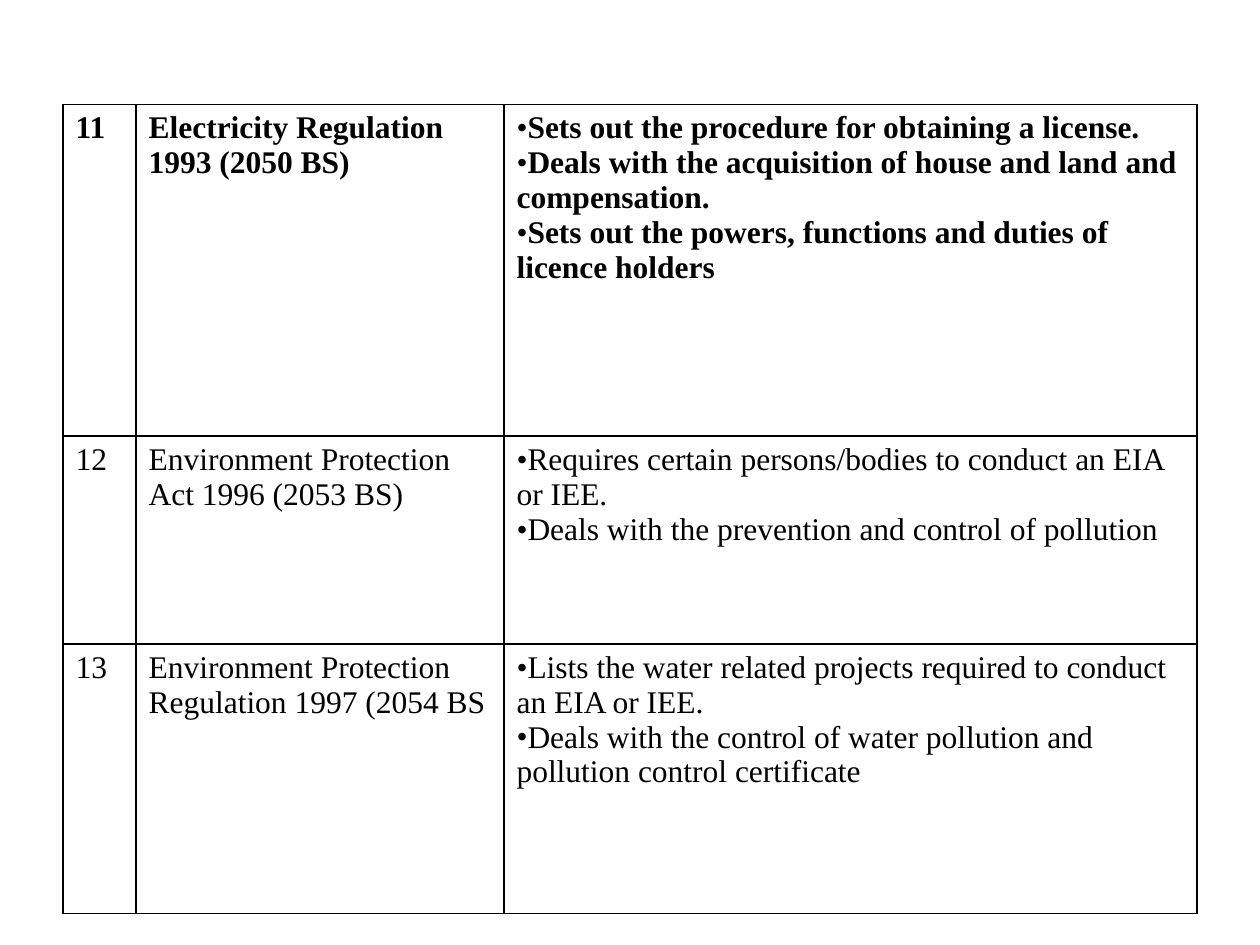
from dataclasses import dataclass

from lxml.etree import SubElement
from pptx import Presentation
from pptx.dml.color import RGBColor
from pptx.oxml import parse_xml
from pptx.oxml.ns import nsdecls, qn
from pptx.util import Inches, Pt


@dataclass(frozen=True)
class Theme:
    font: str = "Times New Roman"
    text_size: int = 18
    text_color: str = "000000"
    cell_color: str = "FFFFFF"
    border_color: str = "000000"
    border_width: int = 1


THEME = Theme()

COLUMN_WIDTHS = [0.58, 2.92, 5.5]
ROW_HEIGHTS = [2.63, 1.65, 2.14]

# Number, law, provisions
LAWS = [
    ("11", "Electricity Regulation 1993 (2050 BS)", [
        "Sets out the procedure for obtaining a license.",
        "Deals with the acquisition of house and land and compensation.",
        "Sets out the powers, functions and duties of licence holders",
    ]),
    ("12", "Environment Protection Act 1996 (2053 BS)", [
        "Requires certain persons/bodies to conduct an EIA or IEE.",
        "Deals with the prevention and control of pollution",
    ]),
    ("13", "Environment Protection Regulation 1997 (2054 BS", [
        "Lists the water related projects required to conduct an EIA or IEE.",
        "Deals with the control of water pollution and pollution control certificate",
    ]),
]


def add_bullet(paragraph):
    properties = paragraph._p.get_or_add_pPr()
    properties.set("marL", "0")
    properties.set("indent", "0")
    SubElement(properties, qn("a:buFont")).set("typeface", THEME.font)
    SubElement(properties, qn("a:buChar")).set("char", "•")


def style_cell(cell):
    cell.fill.solid()
    cell.fill.fore_color.rgb = RGBColor.from_string(THEME.cell_color)
    # Border lines come before the fill in the cell properties
    properties = cell._tc.get_or_add_tcPr()
    for position, side in enumerate("LRTB"):
        properties.insert(position, parse_xml(
            f'<a:ln{side} {nsdecls("a")} w="{Pt(THEME.border_width)}">'
            f'<a:solidFill><a:srgbClr val="{THEME.border_color}"/></a:solidFill>'
            f'</a:ln{side}>'))


def write_cell(cell, lines, bold, bulleted):
    cell.text_frame.text = "\n".join(lines)
    for paragraph in cell.text_frame.paragraphs:
        if bulleted:
            add_bullet(paragraph)
        for run in paragraph.runs:
            run.font.name = THEME.font
            run.font.size = Pt(THEME.text_size)
            run.font.bold = bold
            run.font.color.rgb = RGBColor.from_string(THEME.text_color)


def add_law_table(slide):
    frame = slide.shapes.add_table(
        len(LAWS), len(COLUMN_WIDTHS), Inches(0.5), Inches(0.83),
        Inches(sum(COLUMN_WIDTHS)), Inches(sum(ROW_HEIGHTS)))
    table = frame.table
    table.first_row = False
    table.horz_banding = False
    for column, width in zip(table.columns, COLUMN_WIDTHS):
        column.width = Inches(width)
    for row_index, (number, law, provisions) in enumerate(LAWS):
        row = table.rows[row_index]
        row.height = Inches(ROW_HEIGHTS[row_index])
        contents = [[number], [law], provisions]
        for cell, lines in zip(row.cells, contents):
            style_cell(cell)
            write_cell(cell, lines, bold=row_index == 0,
                       bulleted=lines is provisions)


def main():
    presentation = Presentation()
    presentation.slide_width = Inches(10)
    presentation.slide_height = Inches(7.5)
    slide = presentation.slides.add_slide(presentation.slide_layouts[6])
    add_law_table(slide)
    presentation.save("out.pptx")


if __name__ == "__main__":
    main()
